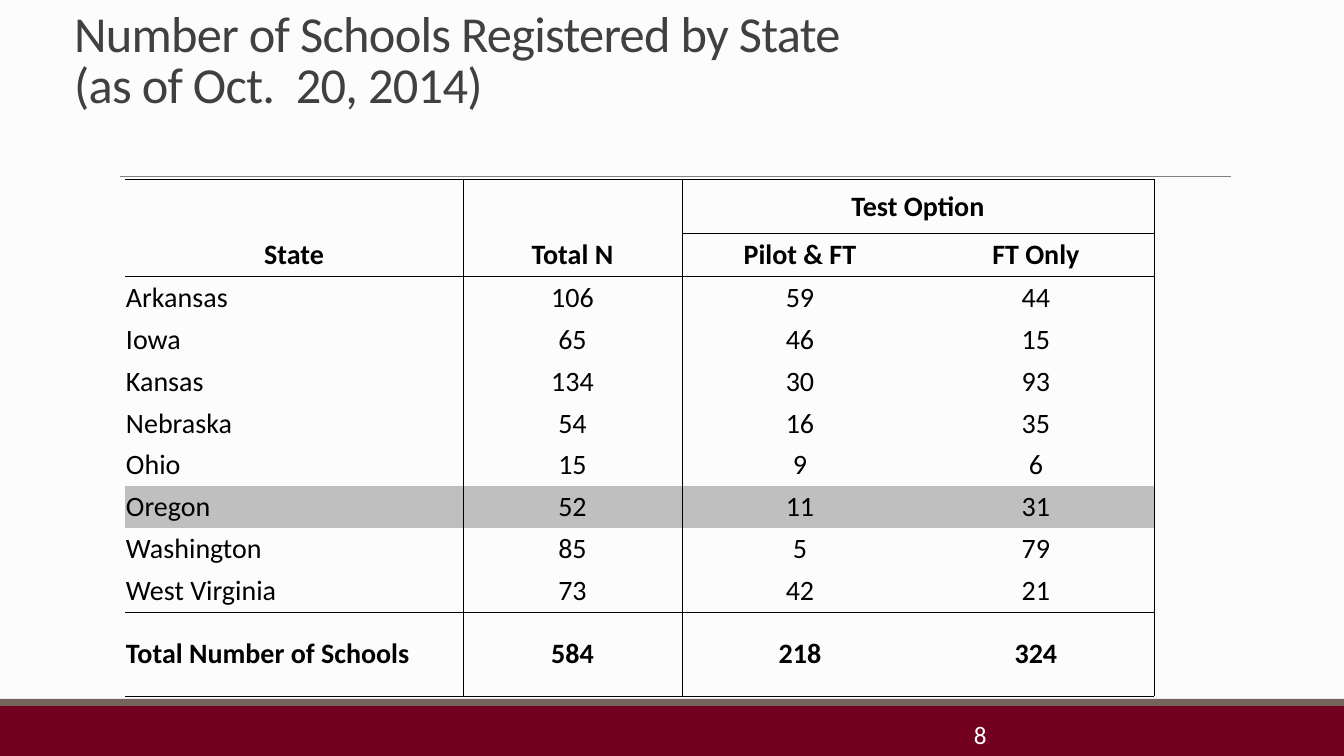
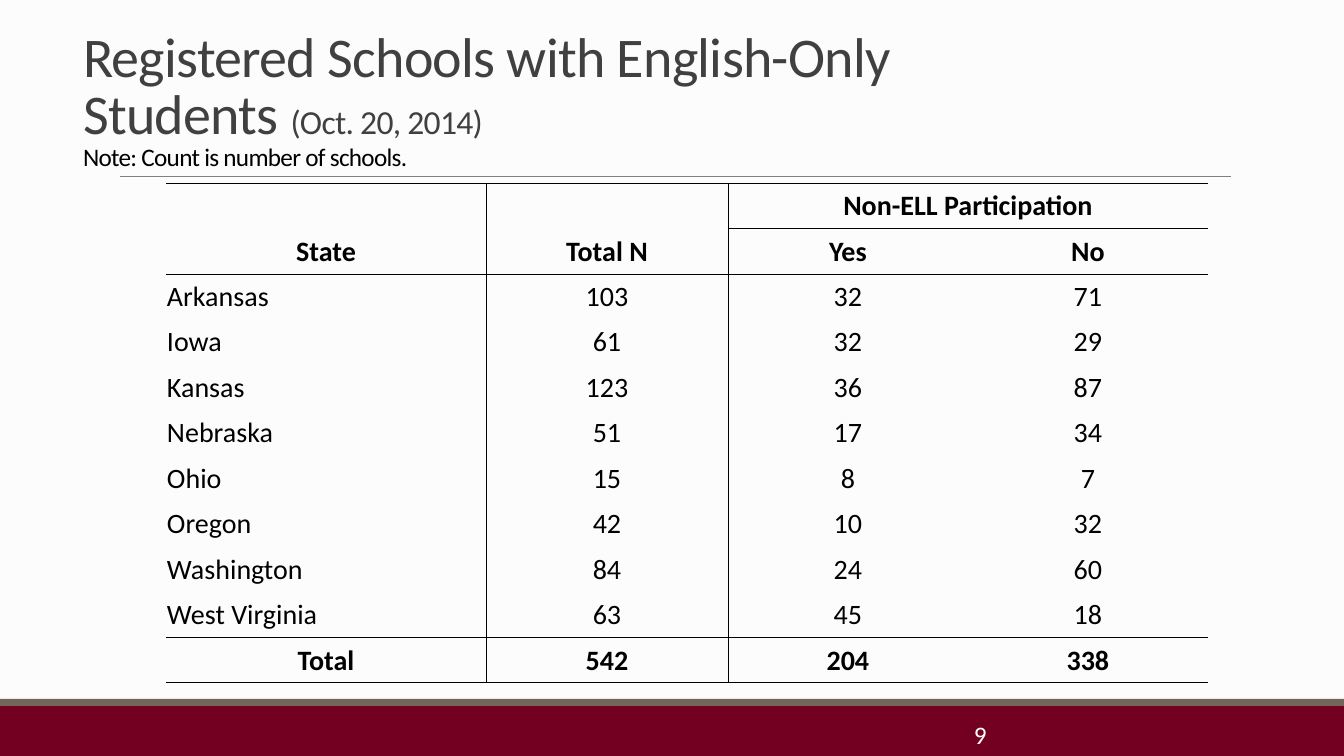
from copy import deepcopy
from dataclasses import dataclass
from typing import Any

from lxml.etree import SubElement
from pptx import Presentation
from pptx.dml.color import RGBColor
from pptx.enum.shapes import MSO_CONNECTOR, MSO_SHAPE
from pptx.enum.text import MSO_ANCHOR, MSO_AUTO_SIZE, PP_ALIGN
from pptx.oxml.ns import qn
from pptx.slide import Slide
from pptx.table import _Cell
from pptx.text.text import _Paragraph
from pptx.util import Emu, Pt

SLIDE_WIDTH, SLIDE_HEIGHT = 1344, 756
TITLE_ONLY = 5
FONT = "Calibri"
PAPER, INK, TITLE_GREY = "FCFCFC", "000000", "404040"
MAROON, TAUPE, RULE_GREY = "740021", "75645B", "808080"
WHITE, HIGHLIGHT = "FFFFFF", "BFBFBF"
HAIRLINE = Pt(0.5)
PLAIN_TABLE_STYLE = "{2D5ABB26-0587-4C30-8999-92F81FD0307C}"


@dataclass(frozen=True)
class Box:
    left: int
    top: int
    width: int
    height: int


@dataclass(frozen=True)
class Band:
    box: Box
    color: str


@dataclass(frozen=True)
class Phrase:
    text: str
    size: int
    color: str = TITLE_GREY


@dataclass(frozen=True)
class SchoolTable:
    left: int
    top: int
    columns: tuple[int, ...]
    rows: tuple[int, ...]
    group: str
    options: tuple[str, str]
    counts: tuple[tuple[str, int, int, int], ...]
    totals: tuple[str, int, int, int]
    totals_align: PP_ALIGN
    closed_right: bool = False
    highlighted: str = ""


@dataclass(frozen=True)
class Page:
    number: int
    title_box: Box
    title_lines: tuple[tuple[Phrase, ...], ...]
    schools: SchoolTable


BANDS = (
    Band(Box(0, 706, SLIDE_WIDTH, 50), MAROON),
    Band(Box(0, 699, SLIDE_WIDTH, 7), TAUPE),
)
NUMBER_BOX = Box(964, 714, 313, 42)

PAGES = (
    Page(
        8,
        Box(64, 28, 1146, 91),
        (
            (Phrase("Number of Schools Registered by State", 36),),
            (Phrase("(as of Oct.  20, 2014)", 36),),
        ),
        SchoolTable(
            125, 179, (338, 219, 236, 236), (54, 43) + (42,) * 8 + (84,),
            "Test Option", ("Pilot & FT", "FT Only"),
            (
                ("Arkansas", 106, 59, 44),
                ("Iowa", 65, 46, 15),
                ("Kansas", 134, 30, 93),
                ("Nebraska", 54, 16, 35),
                ("Ohio", 15, 9, 6),
                ("Oregon", 52, 11, 31),
                ("Washington", 85, 5, 79),
                ("West Virginia", 73, 42, 21),
            ),
            ("Total Number of Schools", 584, 218, 324),
            PP_ALIGN.LEFT, closed_right=True, highlighted="Oregon",
        ),
    ),
    Page(
        9,
        Box(73, 17, 835, 160),
        (
            (
                Phrase("Registered Schools with English-Only Students ", 40),
                Phrase("(Oct. 20, 2014)", 24),
            ),
            (Phrase("Note: Count is number of schools.", 18, INK),),
        ),
        SchoolTable(
            166, 183, (320, 242, 240, 240), (45, 46) * 5 + (45,),
            "Non-ELL Participation", ("Yes", "No"),
            (
                ("Arkansas", 103, 32, 71),
                ("Iowa", 61, 32, 29),
                ("Kansas", 123, 36, 87),
                ("Nebraska", 51, 17, 34),
                ("Ohio", 15, 8, 7),
                ("Oregon", 42, 10, 32),
                ("Washington", 84, 24, 60),
                ("West Virginia", 63, 45, 18),
            ),
            ("Total", 542, 204, 338),
            PP_ALIGN.CENTER,
        ),
    ),
)


def px(length: int) -> Emu:
    return Emu(round(length * 914400 / 100.8))


def place(box: Box) -> tuple[Emu, ...]:
    return tuple(px(n) for n in (box.left, box.top, box.width, box.height))


def rgb(value: str) -> RGBColor:
    return RGBColor.from_string(value)


def apply_format(target: Any, values: dict[str, Any]) -> None:
    for attribute, value in values.items():
        setattr(target, attribute, value)


def add_phrase(paragraph: _Paragraph, text: str, size: int, color: str, bold: bool = False) -> Any:
    run = paragraph.add_run()
    run.text = text
    apply_format(run.font, {"name": FONT, "size": Pt(size), "bold": bold})
    run.font.color.rgb = rgb(color)
    return run


def draw_bands(slide: Slide) -> None:
    for band in BANDS:
        strip = slide.shapes.add_shape(MSO_SHAPE.RECTANGLE, *place(band.box))
        strip.shadow.inherit = False
        strip.fill.solid()
        strip.fill.fore_color.rgb = rgb(band.color)
        strip.line.fill.background()


def draw_rule(slide: Slide) -> None:
    rule = slide.shapes.add_connector(MSO_CONNECTOR.STRAIGHT, px(120), px(176), px(1231), px(176))
    rule.line.color.rgb = rgb(RULE_GREY)
    rule.line.width = HAIRLINE
    SubElement(rule.element.spPr, qn("a:effectLst"))


def draw_title(slide: Slide, page: Page) -> None:
    title = slide.shapes.title
    apply_format(title, dict(zip(("left", "top", "width", "height"), place(page.title_box))))
    apply_format(title.text_frame, {
        "word_wrap": True,
        "auto_size": MSO_AUTO_SIZE.NONE,
        "vertical_anchor": MSO_ANCHOR.BOTTOM,
    })
    paragraph = title.text_frame.paragraphs[0]
    apply_format(paragraph, {"alignment": PP_ALIGN.LEFT, "line_spacing": 0.85})
    for index, line in enumerate(page.title_lines):
        if index:
            paragraph.add_line_break()
            paragraph._p[-1].append(deepcopy(run._r.rPr))
        for phrase in line:
            run = add_phrase(paragraph, phrase.text, phrase.size, phrase.color)
            run._r.rPr.set("spc", "-50")


def draw_number(slide: Slide, number: int) -> None:
    frame = slide.shapes.add_textbox(*place(NUMBER_BOX)).text_frame
    frame.word_wrap = True
    add_phrase(frame.paragraphs[0], str(number), 18, WHITE)


def set_borders(cell: _Cell, sides: dict[str, bool]) -> None:
    properties = cell._tc.get_or_add_tcPr()
    for side, visible in sides.items():
        line = SubElement(properties, qn(f"a:ln{side}"), w=str(HAIRLINE))
        if visible:
            fill = SubElement(line, qn("a:solidFill"))
            SubElement(fill, qn("a:srgbClr"), val=INK)
        else:
            SubElement(line, qn("a:noFill"))


def draw_schools(slide: Slide, schools: SchoolTable) -> None:
    content = (
        ("", "", schools.group, ""),
        ("State", "Total N", *schools.options),
        *schools.counts,
        schools.totals,
    )
    box = Box(schools.left, schools.top, sum(schools.columns), sum(schools.rows))
    frame = slide.shapes.add_table(len(content), len(schools.columns), *place(box))
    table = frame.table
    apply_format(table, {"first_row": False, "horz_banding": False})
    table._tbl.tblPr.find(qn("a:tableStyleId")).text = PLAIN_TABLE_STYLE
    for column, width in zip(table.columns, schools.columns):
        column.width = px(width)
    for row, height in zip(table.rows, schools.rows):
        row.height = px(height)
    table.cell(0, 2).merge(table.cell(0, 3))

    last = len(content) - 1
    for r, values in enumerate(content):
        for c, value in enumerate(values):
            cell = table.cell(r, c)
            apply_format(cell, {
                "margin_left": px(1),
                "margin_right": px(1),
                "margin_top": px(1),
                "margin_bottom": 0,
                "vertical_anchor": MSO_ANCHOR.MIDDLE,
            })
            set_borders(cell, {
                "L": c in (1, 2),
                "R": c < 2 or (schools.closed_right and (c == 3 or r == 0)),
                "T": r in (0, 2, last) or (r == 1 and c >= 2),
                "B": r in (1, last - 1, last) or (r == 0 and c >= 2),
            })
            if values[0] and values[0] == schools.highlighted:
                cell.fill.solid()
                cell.fill.fore_color.rgb = rgb(HIGHLIGHT)
            else:
                cell.fill.background()
            if value == "":
                continue
            paragraph = cell.text_frame.paragraphs[0]
            paragraph.alignment = PP_ALIGN.CENTER
            if c == 0 and r > 1:
                paragraph.alignment = schools.totals_align if r == last else PP_ALIGN.LEFT
            add_phrase(paragraph, str(value), 20, INK, bold=r in (0, 1, last))


def main() -> None:
    deck = Presentation()
    apply_format(deck, {"slide_width": px(SLIDE_WIDTH), "slide_height": px(SLIDE_HEIGHT)})
    paper = deck.slide_master.background.fill
    paper.solid()
    paper.fore_color.rgb = rgb(PAPER)
    for page in PAGES:
        slide = deck.slides.add_slide(deck.slide_layouts[TITLE_ONLY])
        draw_bands(slide)
        draw_rule(slide)
        draw_title(slide, page)
        draw_number(slide, page.number)
        draw_schools(slide, page.schools)
    deck.save("out.pptx")


if __name__ == "__main__":
    main()
